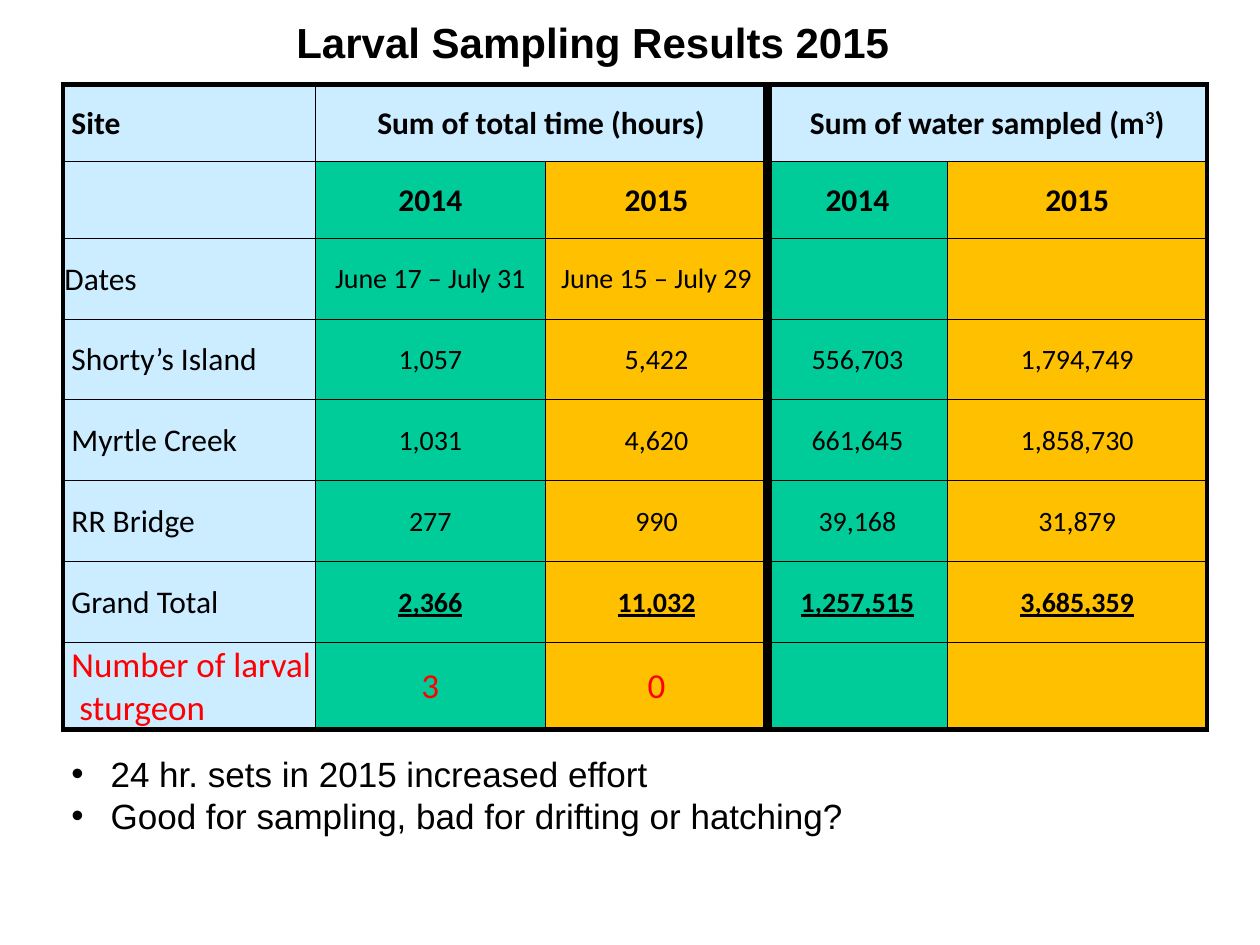
import pptx
import pptx.util
import pptx.dml.color
import pptx.enum.text
import pptx.oxml
import pptx.oxml.ns

Cm, Pt = pptx.util.Cm, pptx.util.Pt
ALIGN, ANCHOR = pptx.enum.text.PP_ALIGN, pptx.enum.text.MSO_ANCHOR
FIT = pptx.enum.text.MSO_AUTO_SIZE
COLORS = {"ink": "000000", "alert": "FF0000", "site": "CCECFF",
          "old": "00CC99", "new": "FFC000"}


def style(para, size, face, color="ink", bold=False, under=False):
    for run in para.runs:
        font = run.font
        font.size, font.name = Pt(size), face
        font.bold, font.underline = bold, under
        font.color.rgb = pptx.dml.color.RGBColor.from_string(COLORS[color])


def border(cell, widths):
    """Draw the left, right, top and bottom edges, with widths in points."""
    props = cell._tc.get_or_add_tcPr()
    for i, (side, width) in enumerate(zip("LRTB", widths)):
        line = pptx.oxml.parse_xml(
            f'<a:ln{side} {pptx.oxml.ns.nsdecls("a")} w="{Pt(width)}">'
            f'<a:solidFill><a:srgbClr val="{COLORS["ink"]}"/></a:solidFill>'
            f'<a:prstDash val="solid"/></a:ln{side}>')
        props.insert(i, line)


deck = pptx.Presentation()
deck.slide_width, deck.slide_height = Cm(25.4), Cm(19.05)
slide = deck.slides.add_slide(deck.slide_layouts[5])

# Title
title = slide.shapes.title
title.left, title.top, title.width, title.height = Cm(5.72), Cm(0.2), Cm(12.7), Cm(1.27)
frame = title.text_frame
frame.text = "Larval Sampling Results 2015"
frame.vertical_anchor = ANCHOR.TOP
frame.auto_size = FIT.SHAPE_TO_FIT_TEXT
frame.paragraphs[0].alignment = ALIGN.LEFT
style(frame.paragraphs[0], 24, "Arial", bold=True)

# Results table
rows = [
    ["Site", "Sum of total time (hours)", "", "Sum of water sampled (m", ""],
    ["", "2014", "2015", "2014", "2015"],
    ["Dates", "June 17 – July 31", "June 15 – July 29", "", ""],
    ["Shorty’s Island", "1,057", "5,422", "556,703", "1,794,749"],
    ["Myrtle Creek", "1,031", "4,620", "661,645", "1,858,730"],
    ["RR Bridge", "277", "990", "39,168", "31,879"],
    ["Grand Total", "2,366", "11,032", "1,257,515", "3,685,359"],
    ["Number of larval sturgeon", "3", "0", "", ""],
]
wide = [5.08, 4.65, 4.47, 3.63, 5.23]
high = [1.55] * 2 + [1.63] * 5 + [1.75]
fills = ["site", "old", "new", "old", "new"]
upright = [3, 0.5, 0.5, 6, 0.5, 3]
level = [3] + [0.5] * 7 + [3]
total, last = 6, 7

table = slide.shapes.add_table(len(rows), len(wide), Cm(1.27), Cm(1.7),
                               Cm(sum(wide)), Cm(sum(high))).table
table.first_row = table.horz_banding = False
for col, width in zip(table.columns, wide):
    col.width = Cm(width)
for row, height in zip(table.rows, high):
    row.height = Cm(height)
for c in (1, 3):
    table.cell(0, c).merge(table.cell(0, c + 1))

for r, row in enumerate(rows):
    for c, text in enumerate(row):
        cell = table.cell(r, c)
        if cell.is_spanned:
            continue
        fill = "site" if r == 0 else fills[c]
        cell.fill.solid()
        cell.fill.fore_color.rgb = pptx.dml.color.RGBColor.from_string(COLORS[fill])
        span = cell.span_width if cell.is_merge_origin else 1
        border(cell, [upright[c], upright[c + span], level[r], level[r + 1]])
        cell.vertical_anchor = ANCHOR.MIDDLE
        cell.margin_left = cell.margin_right = cell.margin_top = Cm(0.03)
        cell.margin_bottom = 0
        para = cell.text_frame.paragraphs[0]
        para.text = text
        if (r, c) == (0, 3):
            power = para.add_run()
            power.text = "3"
            power._r.get_or_add_rPr().set("baseline", "30000")
            para.add_run().text = ")"
        if c > 0:
            para.alignment = ALIGN.CENTER
        elif r == last:
            props = para._p.get_or_add_pPr()
            props.set("marL", str(Cm(0.3)))
            props.set("indent", str(Cm(-0.16)))
        elif text != "Dates":
            para._p.get_or_add_pPr().set("marL", str(Cm(0.14)))
        size = 20 if r == last else 18 if r < 2 or c == 0 else 16
        sums = r == total and c > 0
        style(para, size, "Calibri", "alert" if r == last else "ink",
              bold=r < 2 or sums, under=sums)

# Remarks
notes = slide.shapes.add_textbox(Cm(1.19), Cm(15.04), Cm(22.5), Cm(1.96)).text_frame
notes.word_wrap = True
notes.auto_size = FIT.SHAPE_TO_FIT_TEXT
notes.text = "24 hr. sets in 2015 increased effort\nGood for sampling, bad for drifting or hatching?"
for para in notes.paragraphs:
    style(para, 20, "Arial")
    props = para._p.get_or_add_pPr()
    props.set("marL", str(Cm(0.79)))
    props.set("indent", str(Cm(-0.79)))
    for tag in ('buFont typeface="Arial"', 'buChar char="•"'):
        props.append(pptx.oxml.parse_xml(f'<a:{tag} {pptx.oxml.ns.nsdecls("a")}/>'))

deck.save("out.pptx")
